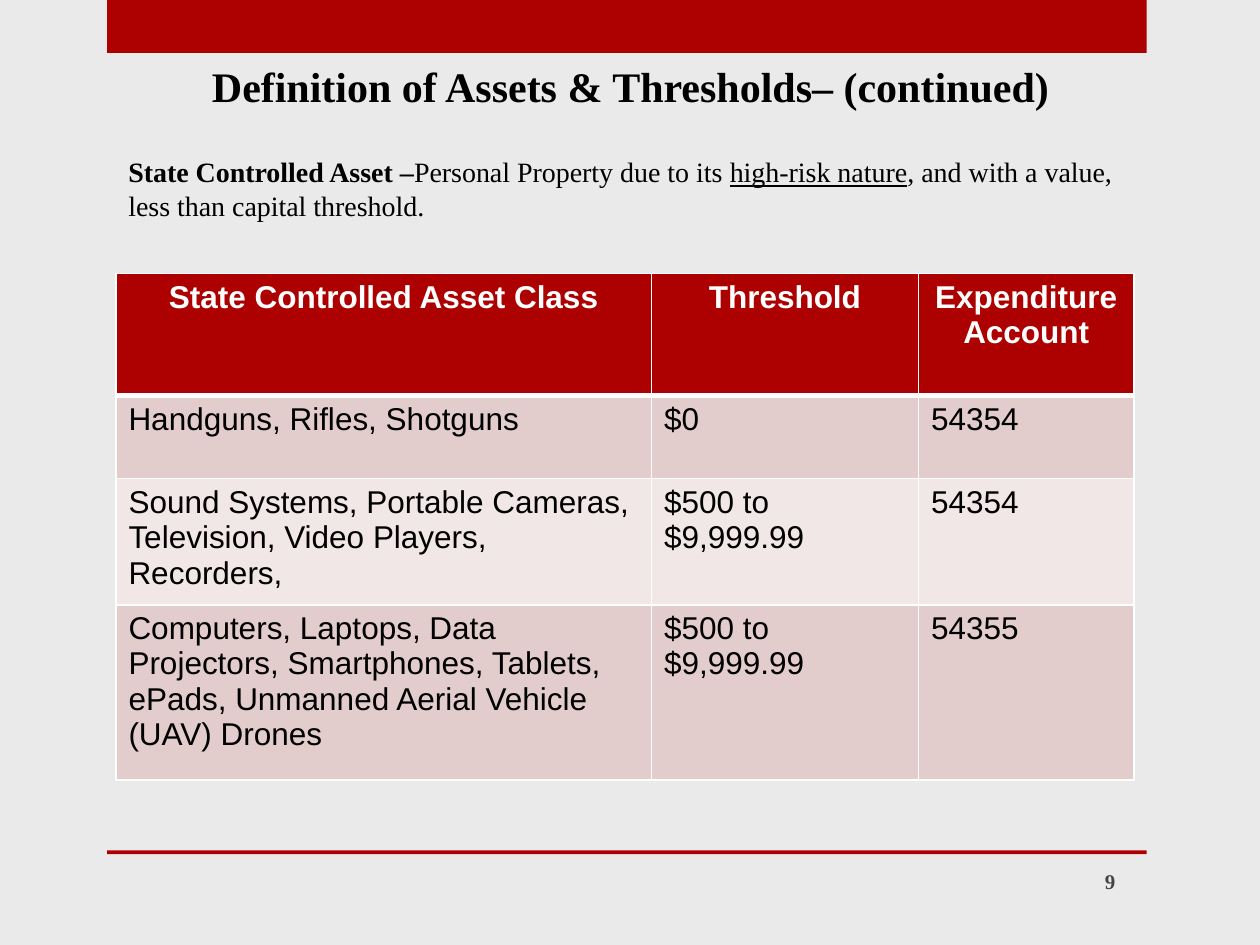
"""Build the slide on state controlled assets and their thresholds."""
import dataclasses
import typing

import lxml.etree
import pptx
import pptx.dml.color
import pptx.enum.shapes
import pptx.enum.text
import pptx.oxml.ns
import pptx.util

Inches, Pt = pptx.util.Inches, pptx.util.Pt
RGB = pptx.dml.color.RGBColor.from_string
ALIGN, ANCHOR = pptx.enum.text.PP_ALIGN, pptx.enum.text.MSO_ANCHOR
qn = pptx.oxml.ns.qn


@dataclasses.dataclass(frozen=True)
class Theme:
    background: str = "EAEAEA"
    accent: str = "AD0101"
    bands: tuple[str, str] = ("E3CCCC", "F1E7E7")
    ink: str = "000000"
    muted: str = "454545"
    white: str = "FFFFFF"
    serif: str = "Times New Roman"
    sans: str = "Arial"
    title_size: int = 24
    body_size: int = 16
    table_size: int = 18
    number_size: int = 12


class Box(typing.NamedTuple):
    left: float
    top: float
    width: float
    height: float

    def emu(self) -> list[int]:
        return [Inches(v) for v in self]


class Run(typing.NamedTuple):
    text: str
    bold: bool | None = None
    underline: bool | None = None


class AssetRow(typing.NamedTuple):
    asset_class: str
    threshold: str
    account: str


THEME = Theme()
BARS = [Box(0.85, 0, 8.25, 0.42), Box(0.85, 6.75, 8.25, 0.03)]
DEFINITION = [
    Run("State Controlled Asset –", bold=True),
    Run("Personal Property due to its "),
    Run("high-risk nature", underline=True),
    Run(", and with a value, less than capital threshold."),
]
ROWS = [
    AssetRow("State Controlled Asset Class", "Threshold", "Expenditure Account"),
    AssetRow("Handguns, Rifles, Shotguns", "$0", "54354"),
    AssetRow("Sound Systems, Portable Cameras, Television, Video Players, Recorders,",
             "$500 to $9,999.99", "54354"),
    AssetRow("Computers, Laptops, Data Projectors, Smartphones, Tablets, "
             "ePads, Unmanned Aerial Vehicle (UAV) Drones",
             "$500 to $9,999.99", "54355"),
]
COL_WIDTHS = [4.25, 2.12, 1.71]
ROW_HEIGHTS = [0.97, 0.66, 0.97, 1.39]


def style(p, font: str, size: int, color: str, bold: bool = False) -> None:
    p.font.name, p.font.size, p.font.bold = font, Pt(size), bold
    p.font.color.rgb = RGB(color)


def add_bar(slide, box: Box) -> None:
    sp = slide.shapes.add_shape(pptx.enum.shapes.MSO_SHAPE.RECTANGLE, *box.emu())
    sp.shadow.inherit = False
    sp.fill.solid()
    sp.fill.fore_color.rgb = RGB(THEME.accent)
    sp.line.fill.background()


def add_text(slide, box: Box, runs: list[Run], size: int, color: str = THEME.ink,
             bold: bool = False, align=ALIGN.LEFT, anchor=ANCHOR.TOP):
    tf = slide.shapes.add_textbox(*box.emu()).text_frame
    tf.word_wrap, tf.vertical_anchor = True, anchor
    p = tf.paragraphs[0]
    p.alignment = align
    style(p, THEME.serif, size, color, bold)
    for run in runs:
        r = p.add_run()
        r.text, r.font.bold, r.font.underline = run
    return tf


def set_borders(cell, bottom: int) -> None:
    tc_pr = cell._tc.get_or_add_tcPr()
    for i, (side, width) in enumerate({"L": 1, "R": 1, "T": 1, "B": bottom}.items()):
        ln = lxml.etree.Element(qn(f"a:ln{side}"), w=str(Pt(width)))
        fill = lxml.etree.SubElement(ln, qn("a:solidFill"))
        lxml.etree.SubElement(fill, qn("a:srgbClr"), val=THEME.white)
        tc_pr.insert(i, ln)


def add_asset_table(slide, box: Box) -> None:
    table = slide.shapes.add_table(len(ROWS), len(COL_WIDTHS), *box.emu()).table
    for column, width in zip(table.columns, COL_WIDTHS):
        column.width = Inches(width)
    for row, height in zip(table.rows, ROW_HEIGHTS):
        row.height = Inches(height)
    for i, values in enumerate(ROWS):
        header = i == 0
        for j, value in enumerate(values):
            cell = table.cell(i, j)
            cell.text = value
            cell.fill.solid()
            cell.fill.fore_color.rgb = RGB(THEME.accent if header else THEME.bands[(i - 1) % 2])
            p = cell.text_frame.paragraphs[0]
            p.alignment = ALIGN.CENTER if header else ALIGN.LEFT
            style(p, THEME.sans, THEME.table_size, THEME.white if header else THEME.ink, header)
            set_borders(cell, bottom=3 if header else 1)


def main() -> None:
    prs = pptx.Presentation()
    prs.slide_width, prs.slide_height = Inches(10), Inches(7.5)
    slide = prs.slides.add_slide(prs.slide_layouts[6])
    slide.background.fill.solid()
    slide.background.fill.fore_color.rgb = RGB(THEME.background)
    for bar in BARS:
        add_bar(slide, bar)
    add_text(slide, Box(0.92, 0.43, 8.17, 0.5),
             [Run("Definition of Assets & Thresholds– (continued)")],
             THEME.title_size, bold=True, align=ALIGN.CENTER)
    tf = add_text(slide, Box(0.92, 0.92, 8.17, 1.45), DEFINITION, THEME.body_size)
    tf.margin_top = Inches(0.31)
    add_asset_table(slide, Box(0.92, 2.17, sum(COL_WIDTHS), sum(ROW_HEIGHTS)))
    add_text(slide, Box(8.67, 6.79, 0.42, 0.4), [Run("9")], THEME.number_size,
             THEME.muted, bold=True, anchor=ANCHOR.MIDDLE)
    prs.save("out.pptx")


if __name__ == "__main__":
    main()
